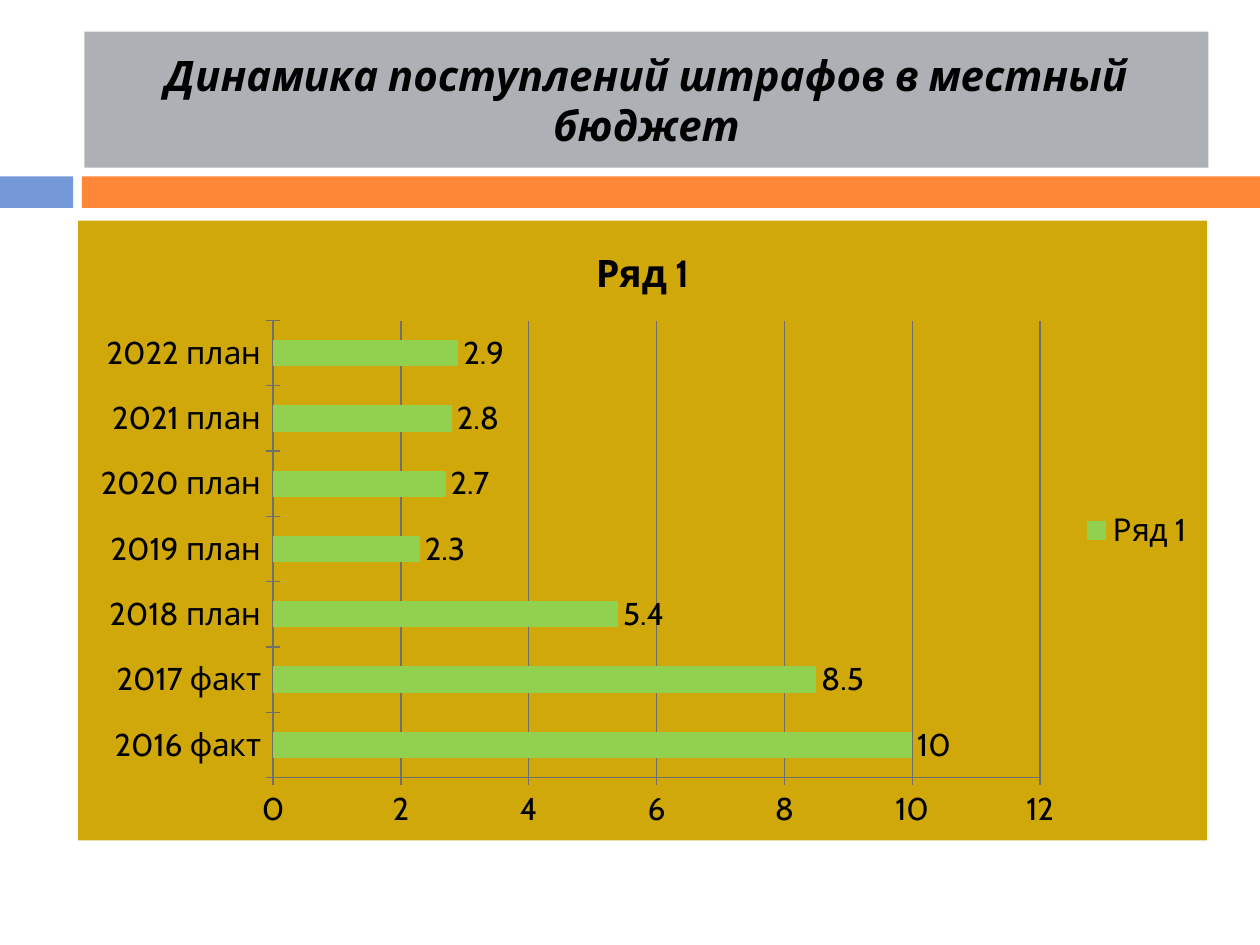
from lxml import etree
from pptx import Presentation
from pptx.chart.data import CategoryChartData
from pptx.dml.color import RGBColor
from pptx.enum.chart import XL_CHART_TYPE, XL_LABEL_POSITION, XL_LEGEND_POSITION, XL_TICK_MARK
from pptx.enum.shapes import MSO_SHAPE
from pptx.enum.text import MSO_ANCHOR, PP_ALIGN
from pptx.oxml import parse_xml
from pptx.util import Inches, Pt

RECTANGLE = MSO_SHAPE.RECTANGLE
BAR_CLUSTERED = XL_CHART_TYPE.BAR_CLUSTERED
OUTSIDE_END = XL_LABEL_POSITION.OUTSIDE_END
LEGEND_RIGHT = XL_LEGEND_POSITION.RIGHT
TICK_CROSS = XL_TICK_MARK.CROSS
MIDDLE = MSO_ANCHOR.MIDDLE
CENTER = PP_ALIGN.CENTER

FONT = "Cabin"
BLACK = "000000"
LINE_GRAY = "70706A"
CHART_FILL = "D0A80A"


def color(hex_string):
    return RGBColor.from_string(hex_string)


def add_rectangle(left, top, width, height, fill):
    shape = slide.shapes.add_shape(
        RECTANGLE, Inches(left), Inches(top), Inches(width), Inches(height))
    shape.shadow.inherit = False
    shape.fill.solid()
    shape.fill.fore_color.rgb = color(fill)
    shape.line.fill.background()
    return shape


presentation = Presentation()
presentation.slide_width = Inches(10)
presentation.slide_height = Inches(7.5)
slide = presentation.slides.add_slide(presentation.slide_layouts[6])

# Divider bars
add_rectangle(0, 1.4, 0.58, 0.25, "7598D9")
add_rectangle(0.65, 1.4, 9.35, 0.25, "FE8637")

# Title
title = add_rectangle(0.67, 0.25, 8.92, 1.08, "ADB0B5")
text_frame = title.text_frame
text_frame.word_wrap = True
text_frame.vertical_anchor = MIDDLE
text_frame.text = "Динамика поступлений штрафов в местный бюджет"
paragraph = text_frame.paragraphs[0]
paragraph.alignment = CENTER
font = paragraph.runs[0].font
font.name = FONT
font.size = Pt(24)
font.bold = True
font.italic = True
font.color.rgb = color(BLACK)

# Bar chart of fines by year
chart_data = CategoryChartData()
chart_data.categories = ["2016 факт", "2017 факт", "2018 план", "2019 план",
                         "2020 план", "2021 план", "2022 план"]
chart_data.add_series("Ряд 1", [10, 8.5, 5.4, 2.3, 2.7, 2.8, 2.9])
chart = slide.shapes.add_chart(
    BAR_CLUSTERED, Inches(0.62), Inches(1.75), Inches(8.96), Inches(4.92),
    chart_data).chart
chart.font.name = FONT
chart.font.size = Pt(18)
chart.font.color.rgb = color(BLACK)

# Chart title and legend
chart.has_title = True
chart.chart_title.include_in_layout = False
chart.chart_title.text_frame.text = "Ряд 1"
title_font = chart.chart_title.text_frame.paragraphs[0].runs[0].font
title_font.name = FONT
title_font.size = Pt(21.6)
title_font.bold = True
title_font.color.rgb = color(BLACK)
chart.has_legend = True
chart.legend.position = LEGEND_RIGHT
chart.legend.include_in_layout = False

# Bars and value labels
plot = chart.plots[0]
plot.vary_by_categories = False
plot.gap_width = 150
series = plot.series[0]
series.format.fill.solid()
series.format.fill.fore_color.rgb = color("92D050")
plot.has_data_labels = True
plot.data_labels.show_value = True
plot.data_labels.position = OUTSIDE_END

# Axes
for axis in (chart.category_axis, chart.value_axis):
    axis.major_tick_mark = TICK_CROSS
    axis.format.line.color.rgb = color(LINE_GRAY)
    axis.format.line.width = Pt(0.75)
value_axis = chart.value_axis
value_axis.minimum_scale = 0
value_axis.maximum_scale = 12
value_axis.major_unit = 2
value_axis.has_major_gridlines = True
value_axis.major_gridlines.format.line.color.rgb = color(LINE_GRAY)
value_axis.major_gridlines.format.line.width = Pt(0.75)

# Chart background
chart_space = chart.element
namespace = etree.QName(chart_space).namespace
background = parse_xml(
    f'<c:spPr xmlns:c="{namespace}"'
    ' xmlns:a="http://schemas.openxmlformats.org/drawingml/2006/main">'
    f'<a:solidFill><a:srgbClr val="{CHART_FILL}"/></a:solidFill>'
    '<a:ln><a:noFill/></a:ln></c:spPr>')
chart_space.find(f"{{{namespace}}}chart").addnext(background)

presentation.save("out.pptx")
